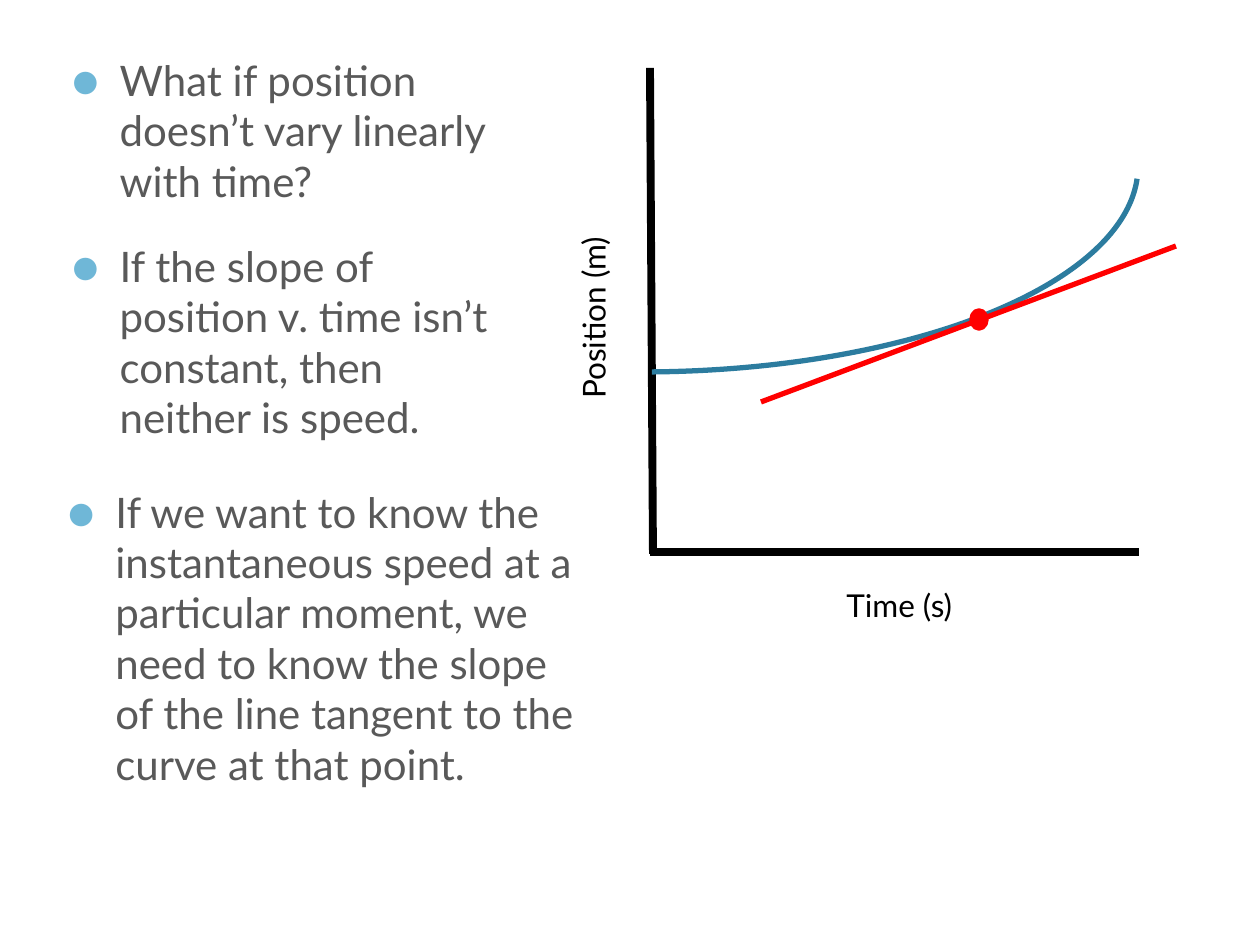
from dataclasses import dataclass

from lxml.etree import SubElement
from pptx import Presentation
from pptx.dml.color import RGBColor
from pptx.enum.shapes import MSO_CONNECTOR, MSO_SHAPE
from pptx.enum.text import MSO_ANCHOR, MSO_AUTO_SIZE
from pptx.oxml.ns import qn
from pptx.util import Emu, Pt

FONT = "Lato"
BLACK = RGBColor(0x00, 0x00, 0x00)
GREY = RGBColor(0x59, 0x59, 0x59)
RED = RGBColor(0xFF, 0x00, 0x00)
TEAL = RGBColor(0x2C, 0x7C, 0x9F)
BULLET_BLUE = RGBColor(0x6F, 0xB7, 0xD7)


@dataclass(frozen=True)
class Box:
    left: int
    top: int
    width: int
    height: int

    def emu(self) -> tuple:
        return tuple(px(v) for v in (self.left, self.top, self.width, self.height))


@dataclass(frozen=True)
class Stroke:
    start: tuple
    end: tuple
    color: RGBColor
    weight: float


@dataclass(frozen=True)
class AxisLabel:
    text: str
    box: Box
    rotation: int = 0


POINTS = [
    "What if position doesn’t vary linearly with time?",
    "If the slope of position v. time isn’t constant, then neither is speed.",
]
CONCLUSION = [
    "If we want to know the instantaneous speed at a particular moment, "
    "we need to know the slope of the line tangent to the curve at that point.",
]
AXES = [
    Stroke((650, 68), (653, 554), BLACK, 4.5),
    Stroke((1139, 552), (650, 552), BLACK, 4.5),
]
TANGENT = Stroke((761, 402), (1176, 246), RED, 3)
LABELS = [
    AxisLabel("Position (m)", Box(498, 291, 190, 50), 270),
    AxisLabel("Time (s)", Box(834, 580, 134, 50)),
]


def px(value: int) -> Emu:
    return Emu(round(value * 914400 / 126))


def write_bullets(frame, texts: list) -> None:
    frame.word_wrap = True
    frame.auto_size = MSO_AUTO_SIZE.NONE
    frame.vertical_anchor = MSO_ANCHOR.TOP
    for index, text in enumerate(texts):
        paragraph = frame.add_paragraph() if index else frame.paragraphs[0]
        paragraph.text = text
        paragraph.space_before = Pt(20)
        paragraph.font.name = FONT
        paragraph.font.size = Pt(24)
        paragraph.font.color.rgb = GREY
        properties = paragraph._p.get_or_add_pPr()
        properties.set("marL", str(px(48)))
        properties.set("indent", str(-px(48)))
        bullet = [
            SubElement(properties, qn("a:buClr")),
            SubElement(properties, qn("a:buSzPct"), val="110000"),
            SubElement(properties, qn("a:buFont"), typeface=FONT),
            SubElement(properties, qn("a:buChar"), char="●"),
        ]
        SubElement(bullet[0], qn("a:srgbClr"), val=str(BULLET_BLUE))
        default_run = properties.find(qn("a:defRPr"))
        if default_run is not None:
            properties.append(default_run)


def draw_stroke(slide, stroke: Stroke) -> None:
    ends = [px(v) for v in (*stroke.start, *stroke.end)]
    connector = slide.shapes.add_connector(MSO_CONNECTOR.STRAIGHT, *ends)
    connector.line.color.rgb = stroke.color
    connector.line.width = Pt(stroke.weight)
    SubElement(connector._element.spPr, qn("a:effectLst"))


def draw_label(slide, label: AxisLabel) -> None:
    textbox = slide.shapes.add_textbox(*label.box.emu())
    textbox.rotation = label.rotation
    frame = textbox.text_frame
    frame.word_wrap = False
    frame.auto_size = MSO_AUTO_SIZE.SHAPE_TO_FIT_TEXT
    paragraph = frame.paragraphs[0]
    paragraph.text = label.text
    paragraph.font.name = FONT
    paragraph.font.size = Pt(18)
    paragraph.font.color.rgb = BLACK


def draw_outlined(slide, kind: MSO_SHAPE, box: Box, color: RGBColor, weight: float):
    shape = slide.shapes.add_shape(kind, *box.emu())
    shape.shadow.inherit = False
    shape.fill.background()
    shape.line.color.rgb = color
    shape.line.width = Pt(weight)
    return shape


def main() -> None:
    """Build the slide on instantaneous speed and the tangent line."""
    deck = Presentation()
    deck.slide_width, deck.slide_height = px(1260), px(945)
    slide = deck.slides.add_slide(deck.slide_layouts[1])
    unused_title = slide.shapes.title._element
    unused_title.getparent().remove(unused_title)

    body = slide.placeholders[1]
    body.left, body.top, body.width, body.height = Box(59, 48, 446, 431).emu()
    write_bullets(body.text_frame, POINTS)

    for axis in AXES:
        draw_stroke(slide, axis)
    for label in LABELS:
        draw_label(slide, label)

    curve = draw_outlined(slide, MSO_SHAPE.ARC, Box(145, -39, 993, 411), TEAL, 3)
    curve.adjustments[0] = 0.85
    curve.adjustments[1] = 52.25
    moment = draw_outlined(slide, MSO_SHAPE.OVAL, Box(971, 310, 16, 19), RED, 2)
    moment.fill.solid()
    moment.fill.fore_color.rgb = RED
    draw_stroke(slide, TANGENT)

    conclusion = slide.shapes.add_textbox(*Box(55, 480, 543, 431).emu())
    write_bullets(conclusion.text_frame, CONCLUSION)
    deck.save("out.pptx")


if __name__ == "__main__":
    main()
